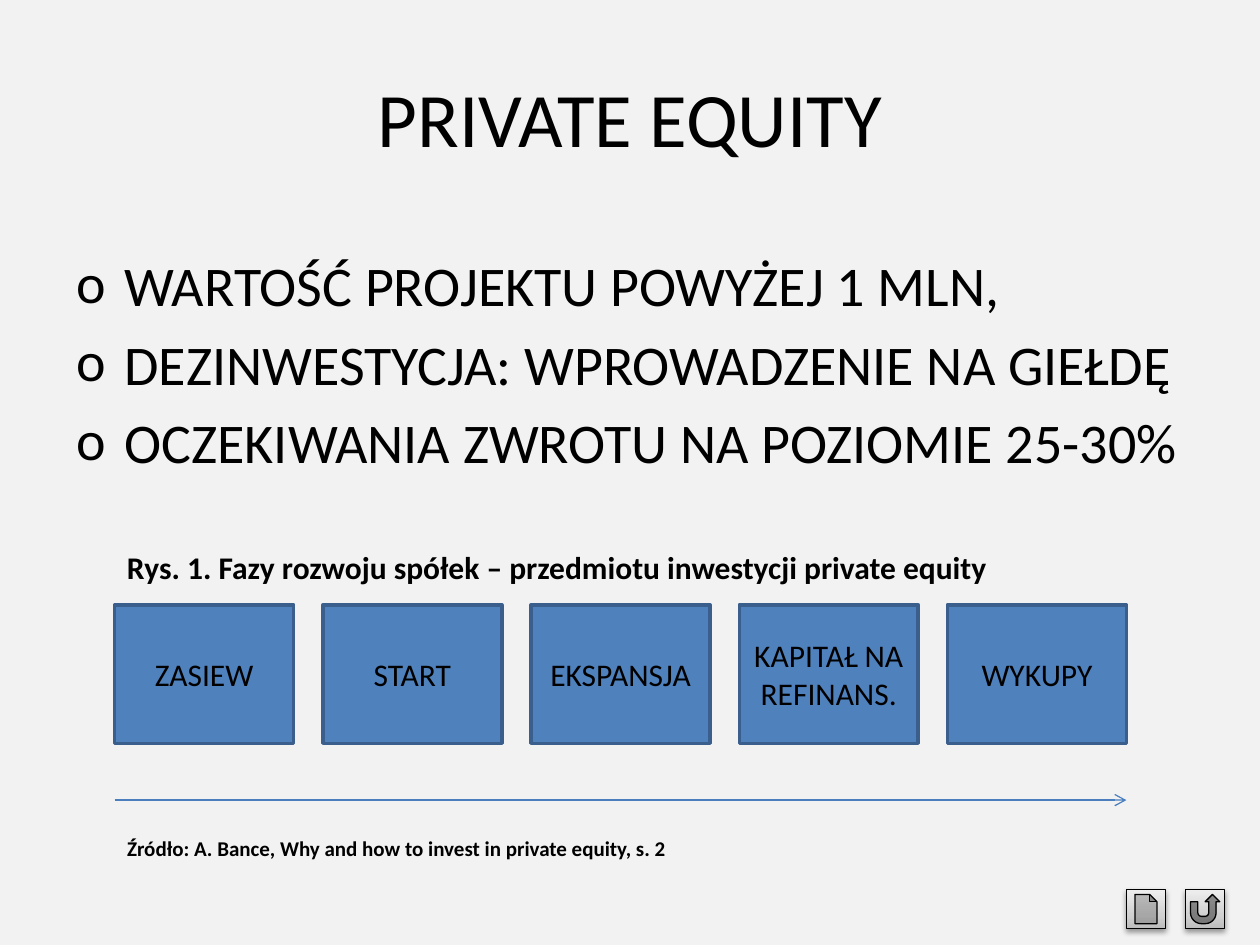
from pptx import Presentation
from pptx.dml.color import RGBColor
from pptx.enum.shapes import MSO_CONNECTOR, MSO_SHAPE
from pptx.enum.text import MSO_ANCHOR, PP_ALIGN
from pptx.oxml import parse_xml
from pptx.oxml.ns import nsdecls
from pptx.util import Inches, Pt

LEFT, CENTER = PP_ALIGN.LEFT, PP_ALIGN.CENTER
TOP, MIDDLE = MSO_ANCHOR.TOP, MSO_ANCHOR.MIDDLE
RECT = MSO_SHAPE.RECTANGLE
STRAIGHT = MSO_CONNECTOR.STRAIGHT
ICONS = [MSO_SHAPE.ACTION_BUTTON_DOCUMENT, MSO_SHAPE.ACTION_BUTTON_RETURN]

POINTS = [
    "WARTOŚĆ PROJEKTU POWYŻEJ 1 MLN,",
    "DEZINWESTYCJA: WPROWADZENIE NA GIEŁDĘ",
    "OCZEKIWANIA ZWROTU NA POZIOMIE 25-30%",
]
PHASES = ["ZASIEW", "START", "EKSPANSJA", "KAPITAŁ NA REFINANS.", "WYKUPY"]
STOPS = [(0, "BDBDBD"), (35, "D1D1D1"), (100, "EEEEEE")]
EDGE, END = 0.91, 8.94


def color(code):
    return RGBColor.from_string(code)


def apply(item, values):
    for name, value in values.items():
        setattr(item, name, value)


def place(*sizes):
    return [Inches(size) for size in sizes]


def write(shape, lines, size, bold=False, align=LEFT, anchor=TOP, gap=0):
    frame = shape.text_frame
    apply(frame, {"word_wrap": True, "vertical_anchor": anchor})
    frame.text = "\n".join(lines)
    for para in frame.paragraphs:
        apply(para, {"alignment": align, "space_before": Pt(gap)})
        font = para.runs[0].font
        apply(font, {"name": "Calibri", "size": Pt(size), "bold": bold})
        font.color.rgb = color("000000")


def add_text(slide, box, lines, size, **style):
    shape = slide.shapes.add_textbox(*place(*box))
    write(shape, lines, size, **style)
    return shape


def add_list(slide, box, lines, size):
    shape = add_text(slide, box, lines, size, gap=size * 0.2)
    for para in shape.text_frame.paragraphs:
        props = para._p.get_or_add_pPr()
        props.set("marL", str(Inches(0.38)))
        props.set("indent", str(Inches(-0.38)))
        props.append(parse_xml(f'<a:buFont {nsdecls("a")} typeface="Calibri"/>'))
        props.append(parse_xml(f'<a:buChar {nsdecls("a")} char="o"/>'))


def set_line(shape, code, width):
    shape.line.color.rgb = color(code)
    shape.line.width = Pt(width)


def add_phase(slide, box, label):
    shape = slide.shapes.add_shape(RECT, *place(*box))
    shape.shadow.inherit = False
    shape.fill.solid()
    shape.fill.fore_color.rgb = color("4F81BD")
    set_line(shape, "3A5F8C", 2)
    write(shape, [label], 18, align=CENTER, anchor=MIDDLE)


def add_arrow(slide, ends):
    line = slide.shapes.add_connector(STRAIGHT, *place(*ends))
    set_line(line, "4B7EBC", 0.75)
    line.line._get_or_add_ln().append(
        parse_xml(f'<a:tailEnd {nsdecls("a")} type="arrow"/>'))
    line._element.spPr.append(parse_xml(f'<a:effectLst {nsdecls("a")}/>'))


def add_icon(slide, kind, box):
    shape = slide.shapes.add_shape(kind, *place(*box))
    set_line(shape, "000000", 0.75)
    stops = "".join(
        f'<a:gs pos="{pos * 1000}"><a:srgbClr val="{code}"/></a:gs>'
        for pos, code in STOPS)
    props = shape._element.spPr
    props.insert(2, parse_xml(
        f'<a:gradFill {nsdecls("a")}><a:gsLst>{stops}</a:gsLst>'
        '<a:lin ang="16200000" scaled="1"/></a:gradFill>'))
    props.append(parse_xml(
        f'<a:effectLst {nsdecls("a")}><a:outerShdw blurRad="40000" '
        'dist="20000" dir="5400000" rotWithShape="0"><a:srgbClr val="000000">'
        '<a:alpha val="38000"/></a:srgbClr></a:outerShdw></a:effectLst>'))


def main():
    deck = Presentation()
    apply(deck, {"slide_width": Inches(10), "slide_height": Inches(7.5)})
    slide = deck.slides.add_slide(deck.slide_layouts[6])
    fill = slide.background.fill
    fill.solid()
    fill.fore_color.rgb = color("F2F2F2")

    add_text(slide, (0.5, 0.3, 9, 1.25), ["PRIVATE EQUITY"], 44,
             align=CENTER, anchor=MIDDLE)
    add_list(slide, (0.51, 1.94, 9, 2.31), POINTS, 32)
    add_text(slide, (EDGE, 4.3, END - EDGE, 0.4),
             ["Rys. 1. Fazy rozwoju spółek – przedmiotu inwestycji private equity"],
             18, bold=True)

    width = 1.42
    step = (END - EDGE - width) / (len(PHASES) - 1)
    for i, label in enumerate(PHASES):
        add_phase(slide, (EDGE + i * step, 4.8, width, 1.1), label)
    add_arrow(slide, (EDGE, 6.35, END, 6.35))
    add_text(slide, (EDGE, 6.58, 7.95, 0.3),
             ["Źródło: A. Bance, Why and how to invest in private equity, s. 2"],
             12, bold=True)
    for i, kind in enumerate(ICONS):
        add_icon(slide, kind, (END + i * 0.47, 7.06, 0.31, 0.31))
    deck.save("out.pptx")


if __name__ == "__main__":
    main()
